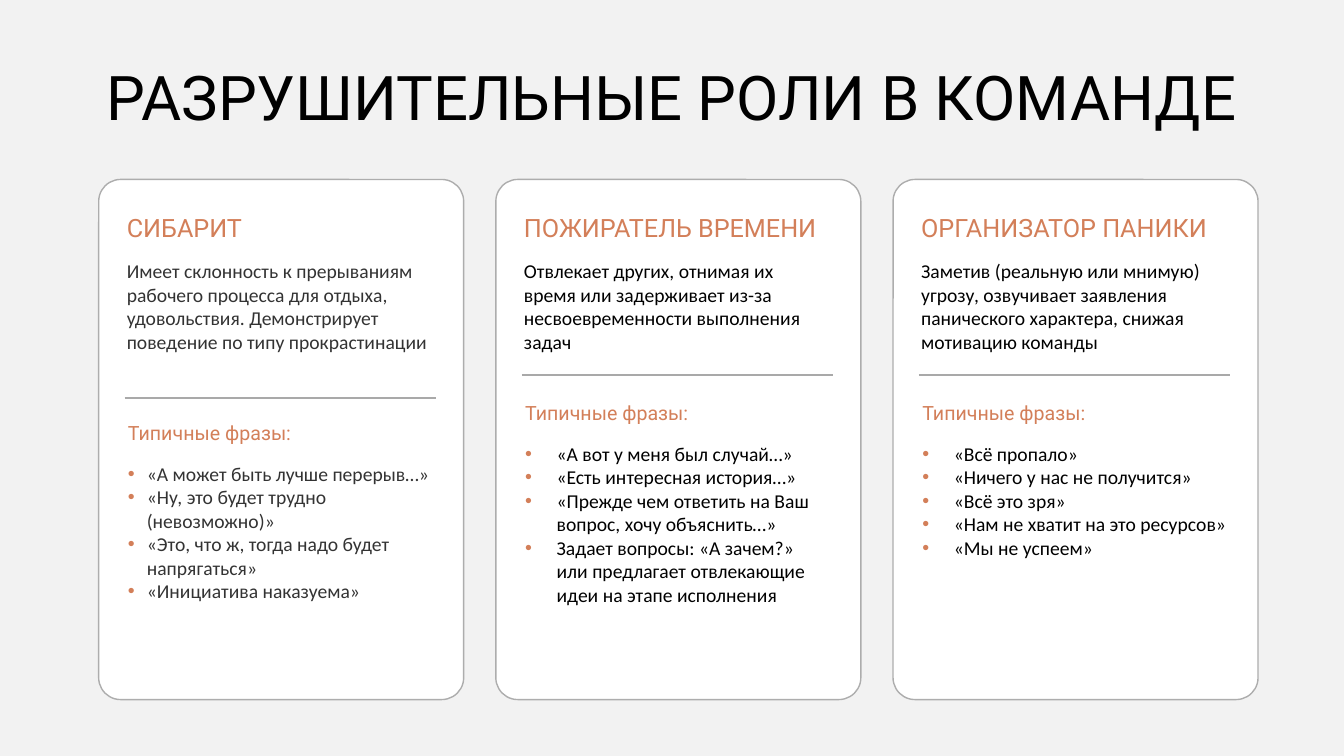
from dataclasses import dataclass

from lxml import etree
from pptx import Presentation
from pptx.dml.color import RGBColor
from pptx.enum.shapes import MSO_CONNECTOR, MSO_SHAPE
from pptx.enum.text import MSO_ANCHOR, PP_ALIGN
from pptx.oxml.ns import qn
from pptx.util import Pt

RECTANGLE = MSO_SHAPE.RECTANGLE
ROUNDED = MSO_SHAPE.ROUNDED_RECTANGLE
STRAIGHT = MSO_CONNECTOR.STRAIGHT
CENTER = PP_ALIGN.CENTER
MIDDLE = MSO_ANCHOR.MIDDLE

BLACK = RGBColor(0x00, 0x00, 0x00)
WHITE = RGBColor(0xFF, 0xFF, 0xFF)
BACKDROP = RGBColor(0xF2, 0xF2, 0xF2)
BORDER = RGBColor(0xAD, 0xAD, 0xAD)
RULE = RGBColor(0xA9, 0xA9, 0xA9)
ACCENT = RGBColor(0xD3, 0x7F, 0x59)
CHARCOAL = RGBColor(0x33, 0x33, 0x33)

SLIDE_W, SLIDE_H = 960, 540
CARD_LEFT, CARD_TOP, CARD_W, CARD_H = 70.5, 128.2, 260.7, 371.5
CARD_PITCH = 283.7


@dataclass
class Role:
    """Content of one card and the measures that vary with it."""
    name: str
    description: str
    phrases: list
    color: RGBColor
    text_width: float
    rule_offset: float
    phrases_offset: float
    indent: float


ROLES = [
    Role("СИБАРИТ",
         "Имеет склонность к прерываниям рабочего процесса для отдыха, "
         "удовольствия. Демонстрирует поведение по типу прокрастинации",
         ["«А может быть лучше перерыв…»",
          "«Ну, это будет трудно (невозможно)»",
          "«Это, что ж, тогда надо будет напрягаться»",
          "«Инициатива наказуема»"],
         CHARCOAL, 236, 156, 169.2, 13.5),
    Role("ПОЖИРАТЕЛЬ ВРЕМЕНИ",
         "Отвлекает других, отнимая их время или задерживает из-за "
         "несвоевременности выполнения задач",
         ["«А вот у меня был случай…»",
          "«Есть интересная история…»",
          "«Прежде чем ответить на Ваш вопрос, хочу объяснить…»",
          "Задает вопросы: «А зачем?» или предлагает отвлекающие идеи "
          "на этапе исполнения"],
         BLACK, 228, 139.7, 154.8, 22.5),
    Role("ОРГАНИЗАТОР ПАНИКИ",
         "Заметив (реальную или мнимую) угрозу, озвучивает заявления "
         "панического характера, снижая мотивацию команды",
         ["«Всё пропало»",
          "«Ничего у нас не получится»",
          "«Всё это зря»",
          "«Нам не хватит на это ресурсов»",
          "«Мы не успеем»"],
         BLACK, 236, 139.7, 154.8, 22.5),
]


def write(paragraph, text, font_name, size, color):
    """Put text into a paragraph and format it."""
    paragraph.text = text
    font = paragraph.runs[0].font
    font.name, font.size, font.color.rgb = font_name, Pt(size), color


def add_text(slide, left, top, width, height, text, font_name, size, color):
    """Add a wrapping text box with one paragraph and return its frame."""
    frame = slide.shapes.add_textbox(
        Pt(left), Pt(top), Pt(width), Pt(height)).text_frame
    frame.word_wrap = True
    write(frame.paragraphs[0], text, font_name, size, color)
    return frame


def add_panel(slide, kind, left, top, width, height, fill):
    """Add a flat filled shape without an outline."""
    panel = slide.shapes.add_shape(
        kind, Pt(left), Pt(top), Pt(width), Pt(height))
    panel.shadow.inherit = False
    panel.fill.solid()
    panel.fill.fore_color.rgb = fill
    panel.line.fill.background()
    return panel


def add_bullet(paragraph, indent):
    """Give a paragraph a hanging accent-coloured bullet."""
    properties = paragraph._p.get_or_add_pPr()
    properties.set("marL", str(Pt(indent)))
    properties.set("indent", str(-Pt(indent)))
    bullet_color = etree.SubElement(properties, qn("a:buClr"))
    etree.SubElement(bullet_color, qn("a:srgbClr"), val=str(ACCENT))
    etree.SubElement(properties, qn("a:buFont"), typeface="Arial")
    etree.SubElement(properties, qn("a:buChar"), char="•")


def add_rule(slide, left, top, width):
    """Draw the horizontal rule between description and phrases."""
    rule = slide.shapes.add_connector(
        STRAIGHT, Pt(left), Pt(top), Pt(left + width), Pt(top))
    rule.line.color.rgb = RULE
    rule.line.width = Pt(1)
    etree.SubElement(rule._element.spPr, qn("a:effectLst"))


def add_phrases(slide, role, left, top, width, height):
    """List the typical phrases of a role under their heading."""
    frame = add_text(slide, left, top, width, height,
                     "Типичные фразы:", "Roboto", 14, ACCENT)
    for number, phrase in enumerate(role.phrases):
        item = frame.add_paragraph()
        add_bullet(item, role.indent)
        write(item, phrase, "Calibri", 14, role.color)
        if number == 0:
            item.space_before = Pt(12)


def add_card(slide, role, left, top, width, height):
    """Build the card of one role inside the given box."""
    card = add_panel(slide, ROUNDED, left, top, width, height, WHITE)
    card.adjustments[0] = 0.06
    card.line.color.rgb = BORDER
    card.line.width = Pt(1)
    text_left = left + 13
    add_text(slide, text_left, top + 20.2, 240, 29,
             role.name, "Roboto", 18, ACCENT)
    add_text(slide, text_left, top + 53.3, role.text_width, 75,
             role.description, "Calibri", 14, role.color)
    add_rule(slide, left + 18.5, top + role.rule_offset, 222.5)
    add_phrases(slide, role, text_left + 0.8, top + role.phrases_offset,
                role.text_width, height - role.phrases_offset - 23)


def add_title(slide, left, top, width, height):
    """Set the centred slide title."""
    frame = add_text(slide, left, top, width, height,
                     "РАЗРУШИТЕЛЬНЫЕ РОЛИ В КОМАНДЕ", "Roboto", 44, BLACK)
    frame.vertical_anchor = MIDDLE
    frame.paragraphs[0].alignment = CENTER
    frame.paragraphs[0].line_spacing = 0.9


def main():
    """Build and save the slide."""
    deck = Presentation()
    deck.slide_width, deck.slide_height = Pt(SLIDE_W), Pt(SLIDE_H)
    slide = deck.slides.add_slide(deck.slide_layouts[6])
    add_panel(slide, RECTANGLE, 0, 0, SLIDE_W, SLIDE_H, BACKDROP)
    add_title(slide, 24, 43.2, 912, 57)
    for column, role in enumerate(ROLES):
        add_card(slide, role, CARD_LEFT + column * CARD_PITCH,
                 CARD_TOP, CARD_W, CARD_H)
    deck.save("out.pptx")


if __name__ == "__main__":
    main()
